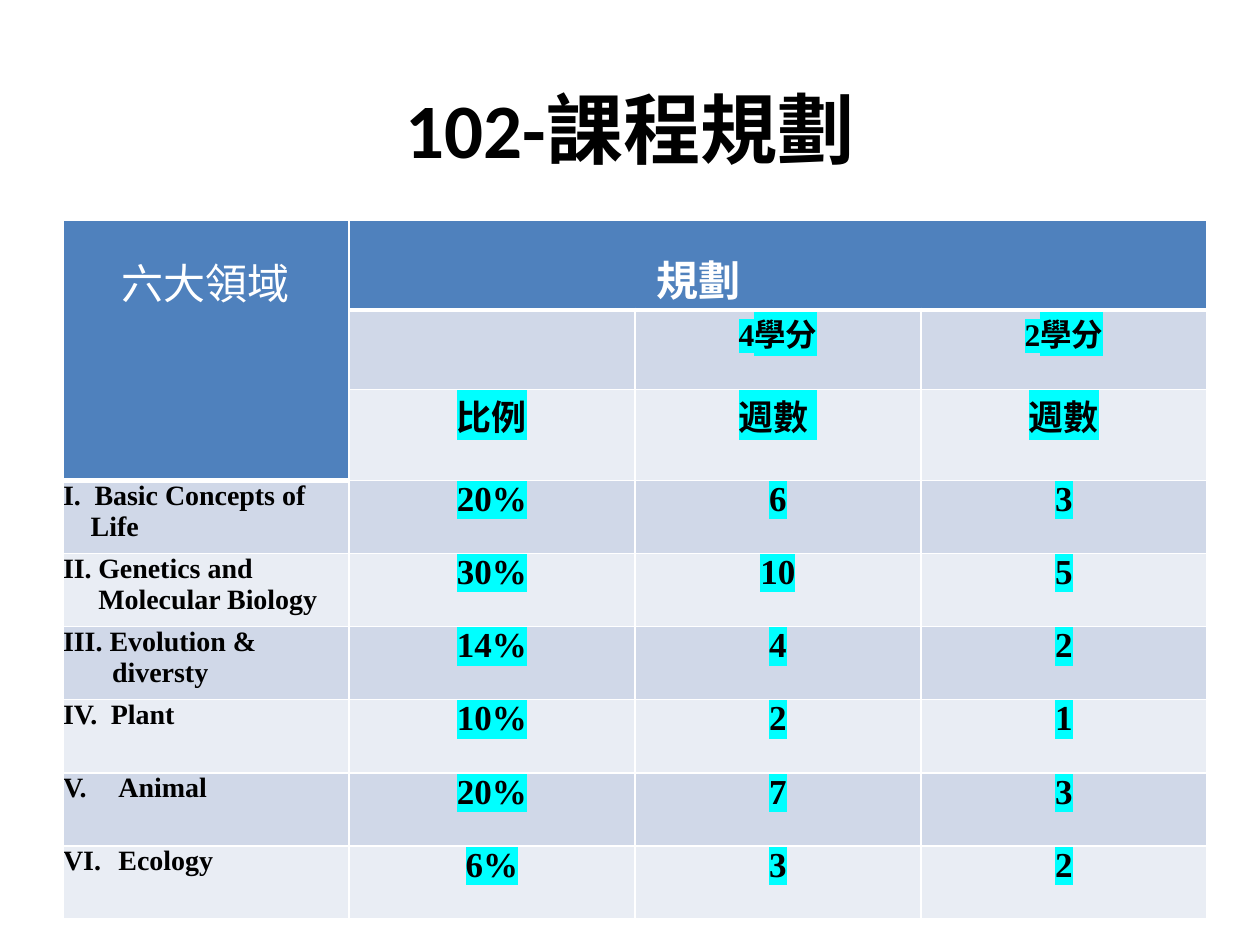
from dataclasses import dataclass
from typing import Optional

from lxml import etree
from pptx import Presentation
from pptx.dml.color import RGBColor
from pptx.enum.text import MSO_ANCHOR, PP_ALIGN
from pptx.oxml.ns import qn
from pptx.util import Inches, Pt

CENTER, LEFT = PP_ALIGN.CENTER, PP_ALIGN.LEFT
MIDDLE = MSO_ANCHOR.MIDDLE


@dataclass(frozen=True)
class Theme:
    black: str = "000000"
    white: str = "FFFFFF"
    header: str = "4F81BD"
    bands: tuple = ("E9EDF4", "D0D8E8")
    highlight: str = "00FFFF"
    title_font: str = "Calibri"
    header_font: str = "Noto Sans CJK SC"
    body_font: str = "Times New Roman"
    east_asian_font: str = "Noto Sans CJK SC"
    title_size: int = 44
    header_size: int = 24
    credit_size: int = 18
    value_size: int = 20
    topic_size: int = 16
    thin: int = 1
    thick: int = 3


THEME = Theme()


@dataclass(frozen=True)
class TextStyle:
    size: int
    font: str = THEME.body_font
    color: str = THEME.black
    bold: bool = True
    align: PP_ALIGN = CENTER
    highlight: Optional[str] = None


@dataclass(frozen=True)
class Topic:
    """One course area: its lines, indents, optional list number and values."""
    lines: tuple
    indents: tuple
    values: tuple
    number: Optional[int] = None


HEADER = TextStyle(THEME.header_size, THEME.header_font, THEME.white)
AREA_HEADER = TextStyle(THEME.header_size, THEME.header_font, THEME.white, bold=False)
PLAN_HEADER = TextStyle(THEME.header_size, THEME.header_font, THEME.white, align=LEFT)
CREDIT = TextStyle(THEME.credit_size, highlight=THEME.highlight)
VALUE = TextStyle(THEME.value_size, highlight=THEME.highlight)
TOPIC = TextStyle(THEME.topic_size, align=LEFT)
TITLE = TextStyle(THEME.title_size, THEME.title_font)

CREDITS = ("", "4學分", "2學分")
MEASURES = ("比例", "週數 ", "週數")
TOPICS = (
    Topic(("I.\tBasic Concepts of", "Life"), (0.25, 0.22), ("20%", "6", "3")),
    Topic(("II.\tGenetics and", "Molecular Biology"), (0.28, 0.28), ("30%", "10", "5")),
    Topic(("III.\tEvolution &", "diversty"), (0.37, 0.39), ("14%", "4", "2")),
    Topic(("IV.\tPlant",), (0.38,), ("10%", "2", "1")),
    Topic(("Animal",), (0.44,), ("20%", "7", "3"), number=5),
    Topic(("Ecology",), (0.44,), ("6%", "3", "2"), number=6),
)
HEADER_ROWS = 3
COLUMN_WIDTH = 2.27
COLUMN_COUNT = 4
ROW_HEIGHTS = (0.71, 0.63, 0.72) + (0.58,) * len(TOPICS)


def write_text(paragraph, text: str, style: TextStyle) -> None:
    paragraph.alignment = style.align
    run = paragraph.add_run()
    run.text = text
    format_values = {"size": Pt(style.size), "name": style.font, "bold": style.bold}
    for name, value in format_values.items():
        setattr(run.font, name, value)
    run.font.color.rgb = RGBColor.from_string(style.color)
    latin = run.font._element.find(qn("a:latin"))
    east_asian = etree.Element(qn("a:ea"), typeface=THEME.east_asian_font)
    latin.addnext(east_asian)
    if style.highlight:
        highlight = etree.Element(qn("a:highlight"))
        etree.SubElement(highlight, qn("a:srgbClr"), val=style.highlight)
        latin.addprevious(highlight)


def set_indent(paragraph, left: float, first_line: float) -> None:
    properties = paragraph._p.get_or_add_pPr()
    properties.set("marL", str(Inches(left)))
    properties.set("indent", str(Inches(first_line)))


def add_roman_number(paragraph, number: int) -> None:
    etree.SubElement(paragraph._p.get_or_add_pPr(), qn("a:buAutoNum"),
                     type="romanUcPeriod", startAt=str(number))


def set_borders(cell, widths: dict) -> None:
    properties = cell._tc.get_or_add_tcPr()
    for position, (side, width) in enumerate(widths.items()):
        line = etree.Element(qn(f"a:ln{side}"), w=str(Pt(width)))
        fill = etree.SubElement(line, qn("a:solidFill"))
        etree.SubElement(fill, qn("a:srgbClr"), val=THEME.white)
        properties.insert(position, line)


def is_header(row: int, column: int) -> bool:
    return row == 0 or (column == 0 and 0 < row < HEADER_ROWS)


def format_cell(cell, row: int, column: int) -> None:
    for side in ("left", "right", "top", "bottom"):
        setattr(cell, f"margin_{side}", 0)
    color = THEME.header if is_header(row, column) else THEME.bands[row % 2]
    cell.fill.solid()
    cell.fill.fore_color.rgb = RGBColor.from_string(color)
    below_header = row > 0 and is_header(row - 1, column)
    set_borders(cell, {
        "L": THEME.thin,
        "R": THEME.thin,
        "T": THEME.thick if below_header else THEME.thin,
        "B": THEME.thick if is_header(row, column) else THEME.thin,
    })


def write_values(table, row: int, values: tuple, style: TextStyle) -> None:
    for column, value in enumerate(values, start=1):
        if value:
            write_text(table.cell(row, column).text_frame.paragraphs[0], value, style)


def write_topic(cell, topic: Topic) -> None:
    frame = cell.text_frame
    for index, (line, indent) in enumerate(zip(topic.lines, topic.indents)):
        paragraph = frame.paragraphs[0] if index == 0 else frame.add_paragraph()
        set_indent(paragraph, indent, -indent if index == 0 else 0)
        if topic.number:
            add_roman_number(paragraph, topic.number)
        write_text(paragraph, line, TOPIC)


def write_headers(table) -> None:
    area, plan = table.cell(0, 0), table.cell(0, 1)
    area.merge(table.cell(HEADER_ROWS - 1, 0))
    plan.merge(table.cell(0, COLUMN_COUNT - 1))
    area.margin_top = Inches(0.24)
    plan.margin_top = Inches(0.22)
    plan.margin_left = Inches(2.44)
    write_text(area.text_frame.paragraphs[0], "六大領域", AREA_HEADER)
    write_text(plan.text_frame.paragraphs[0], "規劃", PLAN_HEADER)
    write_values(table, 1, CREDITS, CREDIT)
    write_values(table, 2, MEASURES, VALUE)


def add_course_table(slide) -> None:
    table = slide.shapes.add_table(
        len(ROW_HEIGHTS), COLUMN_COUNT, Inches(0.5), Inches(1.75),
        Inches(COLUMN_WIDTH * COLUMN_COUNT), Inches(sum(ROW_HEIGHTS))).table
    table.first_row = table.horz_banding = False
    for column in table.columns:
        column.width = Inches(COLUMN_WIDTH)
    for row, height in enumerate(ROW_HEIGHTS):
        table.rows[row].height = Inches(height)
        for column in range(COLUMN_COUNT):
            format_cell(table.cell(row, column), row, column)
    write_headers(table)
    for row, topic in enumerate(TOPICS, start=HEADER_ROWS):
        write_topic(table.cell(row, 0), topic)
        write_values(table, row, topic.values, VALUE)


def add_title(slide) -> None:
    title = slide.shapes.title
    place = {"left": 0.5, "top": 0.39, "width": 9, "height": 1.25}
    for name, value in place.items():
        setattr(title, name, Inches(value))
    title.text_frame.vertical_anchor = MIDDLE
    write_text(title.text_frame.paragraphs[0], "102-課程規劃", TITLE)


def main() -> None:
    presentation = Presentation()
    presentation.slide_width, presentation.slide_height = Inches(10), Inches(7.5)
    slide = presentation.slides.add_slide(presentation.slide_layouts[5])
    add_title(slide)
    add_course_table(slide)
    presentation.save("out.pptx")


if __name__ == "__main__":
    main()
